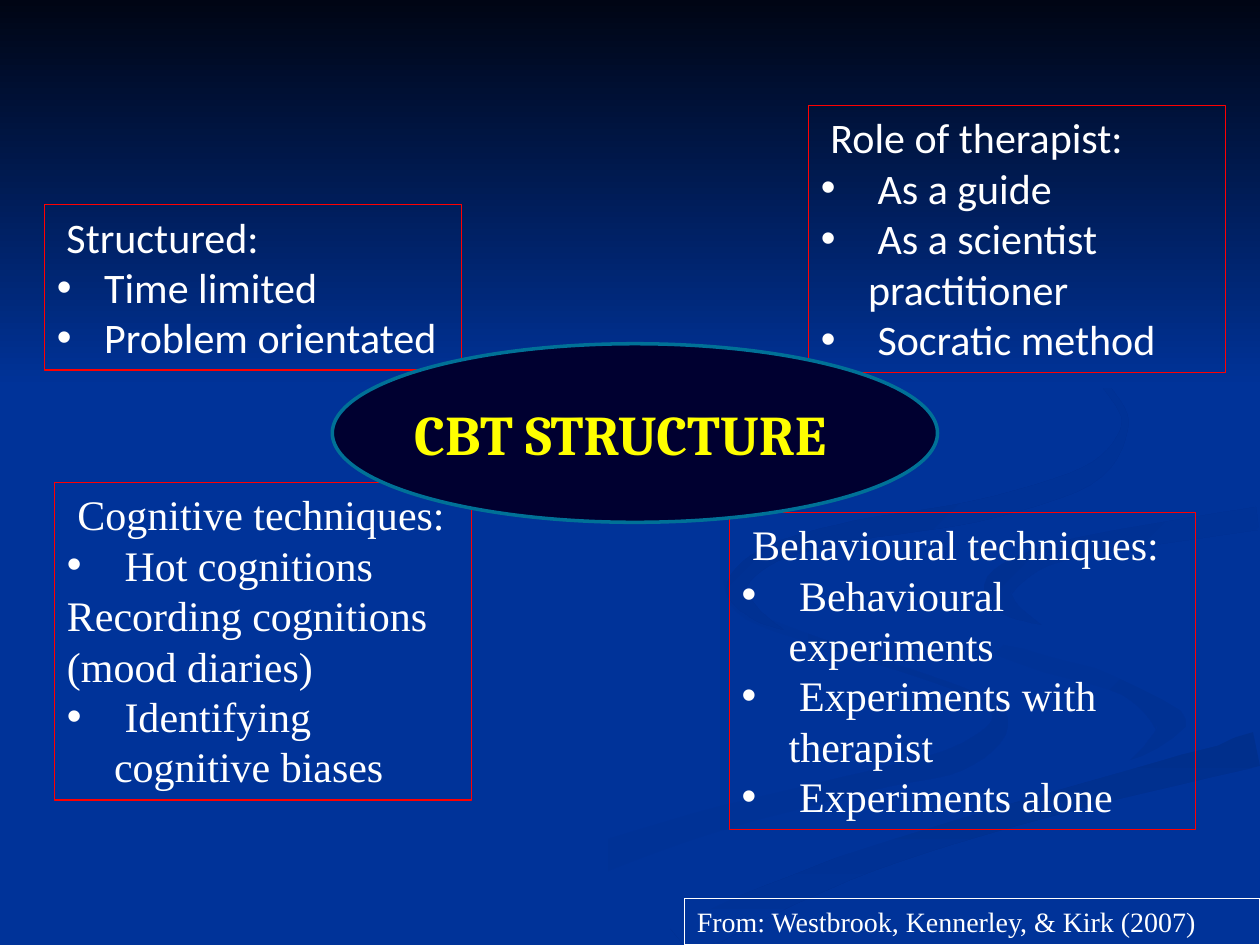
import math
from dataclasses import dataclass
from typing import NamedTuple

from lxml import etree
from pptx import Presentation
from pptx import util as u
from pptx.dml.color import RGBColor
from pptx.enum import shapes, text
from pptx.oxml.ns import qn

COLOURS = {
    "background": "003399", "night": "000514", "white": "FFFFFF", "frame": "FF0000",
    "core": "000030", "core_edge": "007197", "heading": "FFFF00",
    "shade_1": "003193", "shade_2": "002F8C", "shade_3": "003091", "shade_4": "002F8E",
}
SERIF, SANS, DISPLAY = "Times New Roman", "Calibri", "Cambria"
SLIDE_WIDTH, SLIDE_HEIGHT = 25.4, 19.05  # all lengths are in centimetres
NIGHT_HEIGHT = 7.82
BULLET_INDENT = u.Cm(0.95)
LINE_PITCH = 1.2    # line height as a multiple of the text size
CURVE_STEPS = 6     # samples between two knots of a ribbon
UNITS_PER_CM = 100  # resolution of the ribbon outlines


class Knot(NamedTuple):
    """A point on a ribbon's centre line and the ribbon's width there."""
    x: float
    y: float
    width: float


@dataclass
class Ribbon:
    start: str
    end: str
    angle: int
    knots: list[Knot]


@dataclass
class Panel:
    left: float
    top: float
    width: float
    height: float
    font: str
    lines: list[str]  # a leading "•" marks a bulleted line


LOWER_S = Ribbon("background", "shade_1", 0, [
    Knot(14.6, 11.7, 0.05), Knot(15.1, 12.4, 0.2), Knot(17.3, 13.2, 0.12),
    Knot(19.6, 14, 0.12), Knot(20.15, 14.6, 0.36), Knot(19.3, 15.3, 0.5),
    Knot(17.5, 15.75, 0.4), Knot(14, 16.65, 0.5), Knot(10.8, 17.8, 0.7), Knot(8.4, 19, 0.8)])
RIGHT_HOOK = Ribbon("background", "shade_1", 45, [
    Knot(18.4, 11.8, 0), Knot(19.05, 12.6, 0.2), Knot(20.8, 13.3, 0.32),
    Knot(22.7, 13.85, 0.36), Knot(23.6, 14.6, 0.64), Knot(23.2, 15.1, 0.3),
    Knot(22.7, 15.4, 0)])
FLOOR_SWEEP = Ribbon("shade_2", "background", 90, [
    Knot(25.35, 15.1, 0.7), Knot(21.6, 16.1, 0.48), Knot(18, 17.15, 0.5),
    Knot(15.5, 18.15, 0.6), Knot(13.6, 19, 0.9)])
PLAIN_S = Ribbon("background", "background", 0, [
    Knot(25.35, 10, 0.38), Knot(22.35, 10.5, 0.3), Knot(20.2, 11, 0.5),
    Knot(19.15, 11.75, 1.4), Knot(19.75, 12.4, 0.95), Knot(22.1, 13.2, 0.5),
    Knot(24.6, 14.2, 1.2), Knot(23.4, 15.2, 0.25), Knot(20.6, 16, 0.25),
    Knot(16.8, 17.15, 0.3), Knot(14.5, 18.05, 0.35), Knot(12.45, 19, 0.5)])
RIGHT_CURL = Ribbon("shade_3", "background", 45, [
    Knot(25.35, 10.45, 0.46), Knot(22.8, 10.85, 0.42), Knot(21.1, 11.2, 0.4),
    Knot(20.15, 11.8, 0.6), Knot(20.35, 12.25, 0.35), Knot(21, 12.6, 0)])
UPPER_S = Ribbon("shade_4", "background", 45, [
    Knot(19.35, 5.9, 0), Knot(21.45, 7, 0.1), Knot(22.45, 8, 0.13),
    Knot(22.65, 8.7, 0.15), Knot(21.9, 9.6, 0.38), Knot(19.7, 10.3, 0.43),
    Knot(17.25, 10.7, 0.4), Knot(15.6, 11.15, 0.36), Knot(14.85, 11.8, 0.4),
    Knot(15.2, 12.35, 0.25), Knot(15.8, 12.7, 0)])
RIBBONS = [LOWER_S, RIGHT_HOOK, FLOOR_SWEEP, PLAIN_S, RIGHT_CURL, UPPER_S]

PANELS = [
    Panel(0.9, 4.13, 8.41, 3.33, SANS,
          [" Structured:", "•Time limited", "•Problem orientated"]),
    Panel(16.3, 2.13, 8.41, 5.38, SANS,
          [" Role of therapist:", "• As a guide", "• As a scientist practitioner",
           "• Socratic method"]),
    Panel(1.1, 9.73, 8.41, 6.4, SERIF,
          [" Cognitive techniques:", "• Hot cognitions",
           "Recording cognitions (mood diaries)", "• Identifying cognitive biases"]),
    Panel(14.7, 10.33, 9.4, 6.4, SERIF,
          [" Behavioural techniques:", "• Behavioural experiments",
           "• Experiments with therapist", "• Experiments alone"]),
]
CENTRE = Panel(8.1, 7.92, 9.4, 1.63, DISPLAY, ["CBT STRUCTURE"])
SOURCE = Panel(13.8, 18.11, 11.6, 0.94, SERIF, ["From: Westbrook, Kennerley, & Kirk (2007)"])


def rgb(name: str) -> RGBColor:
    return RGBColor.from_string(COLOURS[name])


def smooth(knots: list[Knot]) -> list[Knot]:
    """Sample a Catmull-Rom curve through the knots, widths included."""
    padded = [knots[0], *knots, knots[-1]]
    samples = []
    for neighbours in zip(padded, padded[1:], padded[2:], padded[3:]):
        for step in range(CURVE_STEPS):
            t = step / CURVE_STEPS
            samples.append(Knot(*(
                b + t * (c - a + t * (2 * a - 5 * b + 4 * c - d
                                      + t * (3 * b - a - 3 * c + d))) / 2
                for a, b, c, d in zip(*neighbours))))
    return samples + [knots[-1]]


def ribbon_outline(knots: list[Knot]) -> list[tuple[int, int]]:
    """Go down one side of the centre line and back up the other, inside the slide."""
    spine = smooth(knots)
    sides = ([], [])
    for before, here, after in zip([spine[0], *spine], spine, [*spine[1:], spine[-1]]):
        direction = math.atan2(after.y - before.y, after.x - before.x)
        for side, sign in zip(sides, (1, -1)):
            offset = sign * max(here.width, 0) / 2
            x = min(here.x - offset * math.sin(direction), SLIDE_WIDTH)
            y = min(here.y + offset * math.cos(direction), SLIDE_HEIGHT)
            side.append((round(x * UNITS_PER_CM), round(y * UNITS_PER_CM)))
    return sides[0] + sides[1][::-1]


def fill_gradient(shape, start: str, end: str, angle: int) -> None:
    """Fill without an outline; the angle runs clockwise from left-to-right."""
    shape.shadow.inherit = False
    shape.line.fill.background()
    shape.fill.gradient()
    shape.fill.gradient_angle = -angle % 360
    for stop, name in zip(shape.fill.gradient_stops, (start, end)):
        stop.color.rgb = rgb(name)


def draw_ribbon(slide, ribbon: Ribbon) -> None:
    first, *rest = ribbon_outline(ribbon.knots)
    builder = slide.shapes.build_freeform(*first, scale=u.Cm(1) / UNITS_PER_CM)
    builder.add_line_segments(rest, close=True)
    fill_gradient(builder.convert_to_shape(), ribbon.start, ribbon.end, ribbon.angle)


def draw_night_sky(slide) -> None:
    sky = slide.shapes.add_shape(
        shapes.MSO_SHAPE.RECTANGLE, 0, 0, u.Cm(SLIDE_WIDTH), u.Cm(NIGHT_HEIGHT))
    fill_gradient(sky, "night", "background", 90)


def add_bullet(paragraph) -> None:
    properties = paragraph._p.get_or_add_pPr()
    properties.set("marL", str(BULLET_INDENT))
    properties.set("indent", str(-BULLET_INDENT))
    etree.SubElement(properties, qn("a:buFont")).set("typeface", "Arial")
    etree.SubElement(properties, qn("a:buChar")).set("char", "•")


def write_line(paragraph, content: str, *, font: str, size: float,
               colour: str, bold: bool = False) -> None:
    paragraph.line_spacing = u.Pt(size * LINE_PITCH)
    if content.startswith("•"):
        add_bullet(paragraph)
    run = paragraph.add_run()
    run.text = content.removeprefix("•")
    run.font.name, run.font.size, run.font.bold = font, u.Pt(size), bold
    run.font.color.rgb = rgb(colour)


def style_shape(shape, *, fill: str | None = None, border: str | None = None,
                weight: float = 0.75) -> None:
    if fill:
        shape.fill.solid()
        shape.fill.fore_color.rgb = rgb(fill)
    if border:
        shape.line.color.rgb = rgb(border)
        shape.line.width = u.Pt(weight)


def draw_panel(slide, panel: Panel, *, size: float = 24, colour: str = "white",
               bold: bool = False, border: str | None = None, fill: str | None = None) -> None:
    box = slide.shapes.add_textbox(
        *map(u.Cm, (panel.left, panel.top, panel.width, panel.height)))
    style_shape(box, fill=fill, border=border)
    frame = box.text_frame
    frame.word_wrap = True
    frame.vertical_anchor = text.MSO_ANCHOR.TOP
    for number, content in enumerate(panel.lines):
        paragraph = frame.add_paragraph() if number else frame.paragraphs[0]
        write_line(paragraph, content, font=panel.font, size=size, colour=colour, bold=bold)


def draw_core(slide) -> None:
    core = slide.shapes.add_shape(
        shapes.MSO_SHAPE.OVAL, u.Cm(6.7), u.Cm(6.93), u.Cm(12.2), u.Cm(3.6))
    core.shadow.inherit = False
    style_shape(core, fill="core", border="core_edge", weight=2)


def main() -> None:
    deck = Presentation()
    deck.slide_width, deck.slide_height = u.Cm(SLIDE_WIDTH), u.Cm(SLIDE_HEIGHT)
    slide = deck.slides.add_slide(deck.slide_layouts[6])
    style_shape(slide.background, fill="background")
    for ribbon in RIBBONS:
        draw_ribbon(slide, ribbon)
    draw_night_sky(slide)
    for panel in PANELS:
        draw_panel(slide, panel, border="frame")
    draw_core(slide)
    draw_panel(slide, CENTRE, size=32, colour="heading", bold=True, fill="core")
    draw_panel(slide, SOURCE, size=16, border="white")
    deck.save("out.pptx")


if __name__ == "__main__":
    main()
